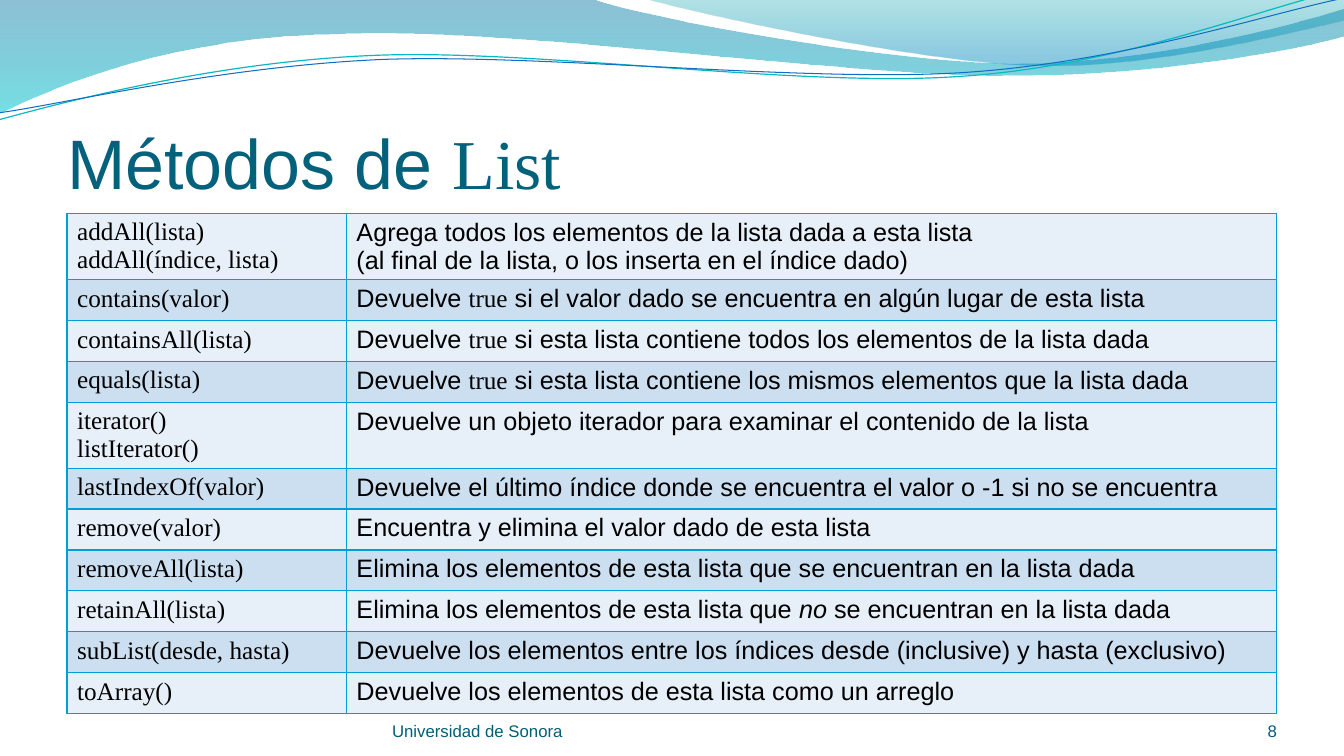
"""Builds the slide that lists the methods of List."""
from lxml import etree
from pptx import Presentation
from pptx.dml.color import RGBColor
from pptx.enum import text
from pptx.oxml.ns import qn
from pptx.util import Cm, Pt

SANS, CODE = "Arial", "Times New Roman"
TITLE = RGBColor(0x04, 0x61, 0x7B)
FOOTER = RGBColor(0x04, 0x5D, 0x75)
BLACK = RGBColor(0, 0, 0)
BORDER = RGBColor(0x00, 0x9D, 0xD9)
ROW_FILLS = (RGBColor(0xE7, 0xEF, 0xF8), RGBColor(0xCC, 0xDF, 0xF1))
DEEP_BLUE, CYAN = RGBColor(0x00, 0x74, 0xA1), RGBColor(0x00, 0xC6, 0xCF)
TEAL, SKY = RGBColor(0x00, 0xA1, 0xA9), RGBColor(0x00, 0x8B, 0xBF)
LINE_TEAL, LINE_BLUE = RGBColor(0x0A, 0xB8, 0xBF), RGBColor(0x0F, 0x6F, 0xC6)

BANDS = [
    ([[(0, 0)], [(14.91, -0.03)],
      [(16.1, 0.43), (22.48, 1.6), (25.68, 1.6)],
      [(28.91, 1.6), (32.46, 0.66), (33.86, 0.23)], [(33.91, 0.91)],
      [(33.3, 1.12), (29.46, 1.93), (25.25, 1.91)],
      [(21.06, 1.91), (12.93, 0.71), (8.71, 0.86)],
      [(4.37, 0.91), (1.55, 2.11), (-0.03, 2.87)]],
     [(0, DEEP_BLUE, 45), (1, CYAN, 55)]),
    ([[(16.23, -0.03)],
      [(17.25, 0.28), (23.09, 1.57), (26.04, 1.65)],
      [(28.98, 1.75), (32.56, 0.81), (33.86, 0.53)], [(33.86, 0)]],
     [(0, TEAL, 30), (0.8, SKY, 45)]),
]
WAVES = [
    ([[(-0.03, 3.02)],
      [(1.63, 2.57), (5.36, 1.57), (9.37, 1.4)],
      [(13.39, 1.22), (20.07, 2.21), (24.13, 1.93)],
      [(28.19, 1.68), (31.8, 0.2), (33.81, -0.25)]], LINE_TEAL, 0.85),
    ([[(0, 2.84)],
      [(1.6, 2.62), (5.54, 1.68), (9.6, 1.5)],
      [(13.64, 1.35), (20.22, 2.08), (24.26, 1.83)],
      [(28.32, 1.57), (31.88, 0.36), (33.88, -0.05)]], LINE_BLUE, 0.75),
]

TRUE = ("true", CODE)
METHODS = [
    (["addAll(lista)", "addAll(índice, lista)"],
     [["Agrega todos los elementos de la lista dada a esta lista"],
      ["(al final de la lista, o los inserta en el índice dado)"]]),
    (["contains(valor)"],
     [["Devuelve ", TRUE, " si el valor dado se encuentra en algún lugar de esta lista"]]),
    (["containsAll(lista)"],
     [["Devuelve ", TRUE, " si esta lista contiene todos los elementos de la lista dada"]]),
    (["equals(lista)"],
     [["Devuelve ", TRUE, " si esta lista contiene los mismos elementos que la lista dada"]]),
    (["iterator()", "listIterator()"],
     [["Devuelve un objeto iterador para examinar el contenido de la lista"]]),
    (["lastIndexOf(valor)"],
     [["Devuelve el último índice donde se encuentra el valor o -1 si no se encuentra"]]),
    (["remove(valor)"], [["Encuentra y elimina el valor dado de esta lista"]]),
    (["removeAll(lista)"],
     [["Elimina los elementos de esta lista que se encuentran en la lista dada"]]),
    (["retainAll(lista)"],
     [["Elimina los elementos de esta lista que ", ("no", SANS, True),
       " se encuentran en la lista dada"]]),
    (["subList(desde, hasta)"],
     [["Devuelve los elementos entre los índices desde (inclusive) y hasta (exclusivo)"]]),
    (["toArray()"], [["Devuelve los elementos de esta lista como un arreglo"]]),
]


def add_run(p, content, size, color, font=SANS, italic=None):
    """Add one formatted run to a paragraph."""
    r = p.add_run()
    r.text = content
    r.font.name, r.font.size, r.font.italic = font, Pt(size), italic
    r.font.color.rgb = color


def set_frame(tf, anchor, top=0):
    """Make a wrapping text frame with no side margins."""
    tf.word_wrap, tf.auto_size = True, text.MSO_AUTO_SIZE.NONE
    tf.vertical_anchor = anchor
    tf.margin_left = tf.margin_right = tf.margin_bottom = 0
    tf.margin_top = top


def add_outline(s, left, top, segments, close):
    """Draw an outline of straight and cubic segments offset by its box."""
    points = [(left + Cm(x), top + Cm(y)) for segment in segments for x, y in segment]
    builder = s.shapes.build_freeform(*points[0])
    builder.add_line_segments(points[1:], close=close)
    sp = builder.convert_to_shape()
    sp.shadow.inherit = False
    vertices = iter(list(sp.element.iter(qn("a:lnTo"))))
    for segment in segments[1:]:
        steps = [next(vertices) for _ in segment]
        if len(steps) == 3:
            curve = etree.Element(qn("a:cubicBezTo"))
            steps[0].addprevious(curve)
            for step in steps:
                curve.append(step[0])
                step.getparent().remove(step)
    return sp


def add_header(s, left, top):
    """Draw the translucent bands and the thin waves."""
    for segments, stops in BANDS:
        sp = add_outline(s, left, top, segments, True)
        sp.line.fill.background()
        sp.fill.gradient()
        sp.fill.gradient_angle = 270
        for stop, (position, color, _) in zip(sp.fill.gradient_stops, stops):
            stop.position, stop.color.rgb = position, color
        for clr, (_, _, alpha) in zip(sp.element.spPr.iter(qn("a:srgbClr")), stops):
            etree.SubElement(clr, qn("a:alpha"), val=str(alpha * 1000))
    for segments, color, width in WAVES:
        sp = add_outline(s, left, top, segments, False)
        sp.fill.background()
        sp.line.color.rgb, sp.line.width = color, Pt(width)


def add_title(s, left, top, width, height):
    """Place and fill the title placeholder."""
    title = s.shapes.title
    title.left, title.top, title.width, title.height = left, top, width, height
    set_frame(title.text_frame, text.MSO_ANCHOR.BOTTOM, Cm(0.13))
    p = title.text_frame.paragraphs[0]
    p.alignment = text.PP_ALIGN.LEFT
    add_run(p, "Métodos de ", 50, TITLE)
    add_run(p, "List", 50, TITLE, CODE)


def format_cell(cell, fill, paragraphs):
    """Give a cell its borders, fill and runs."""
    tc_pr = cell._tc.get_or_add_tcPr()
    for side in ("a:lnL", "a:lnR", "a:lnT", "a:lnB"):
        ln = etree.SubElement(tc_pr, qn(side), w=str(Pt(1)))
        solid = etree.SubElement(ln, qn("a:solidFill"))
        etree.SubElement(solid, qn("a:srgbClr"), val=str(BORDER))
    cell.fill.solid()
    cell.fill.fore_color.rgb = fill
    tf = cell.text_frame
    for i, runs in enumerate(paragraphs):
        p = tf.paragraphs[0] if i == 0 else tf.add_paragraph()
        for run in runs:
            content, *style = (run,) if isinstance(run, str) else run
            add_run(p, content, 18, BLACK, *style)


def add_methods(s, left, top, width, height):
    """Add the table of methods and their descriptions."""
    row_height, name_width = Cm(1.03), Cm(7.04)
    frame = s.shapes.add_table(len(METHODS), 2, left, top, width, row_height * len(METHODS))
    frame.height = height
    table = frame.table
    table.first_row = table.horz_banding = False
    table.columns[0].width, table.columns[1].width = name_width, width - name_width
    for i, (names, description) in enumerate(METHODS):
        fill = ROW_FILLS[i % 2]
        format_cell(table.cell(i, 0), fill, [[(name, CODE)] for name in names])
        format_cell(table.cell(i, 1), fill, description)


def add_footer(s, left, top, width, height):
    """Add the institution and the slide number."""
    number_width = Cm(2.82)
    for content, x, w, align in (
            ("Universidad de Sonora", left, Cm(12.42), text.PP_ALIGN.LEFT),
            ("8", left + width - number_width, number_width, text.PP_ALIGN.RIGHT)):
        tf = s.shapes.add_textbox(x, top, w, height).text_frame
        set_frame(tf, text.MSO_ANCHOR.BOTTOM)
        tf.paragraphs[0].alignment = align
        add_run(tf.paragraphs[0], content, 12, FOOTER)


def main():
    """Build and save the presentation."""
    prs = Presentation()
    prs.slide_width, prs.slide_height = Cm(33.87), Cm(19.05)
    s = prs.slides.add_slide(prs.slide_layouts[5])
    left, width = Cm(1.69), Cm(30.48)
    add_header(s, 0, 0)
    add_title(s, left, Cm(1.96), width, Cm(3.18))
    add_methods(s, left, Cm(5.37), width, Cm(12.83))
    add_footer(s, Cm(9.88), Cm(17.65), Cm(22.3), Cm(1.02))
    prs.save("out.pptx")


if __name__ == "__main__":
    main()
